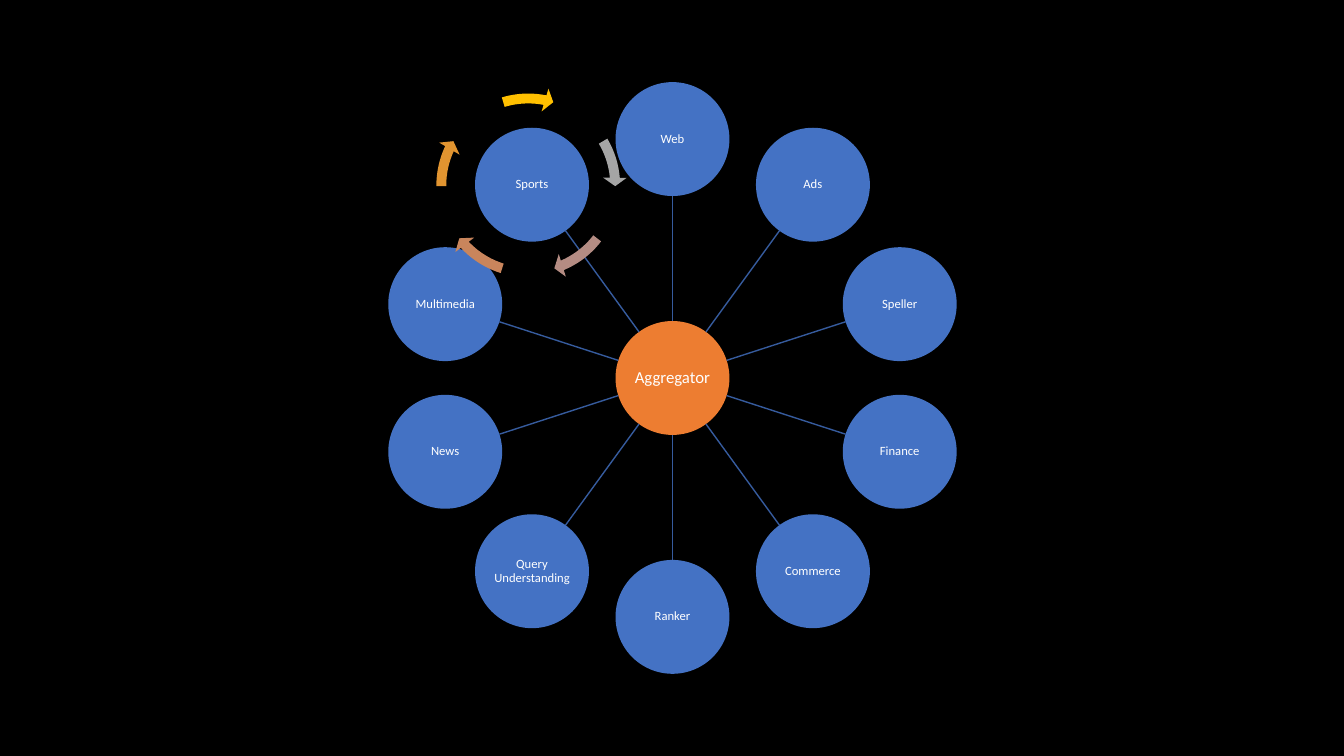
from dataclasses import dataclass
from math import cos, radians, sin

from lxml.etree import SubElement
from pptx import Presentation
from pptx.dml.color import RGBColor
from pptx.enum.shapes import MSO_CONNECTOR as Link, MSO_SHAPE as Shape
from pptx.enum.text import MSO_ANCHOR as Anchor, PP_ALIGN as Align
from pptx.oxml.ns import qn
from pptx.shapes.autoshape import Shape as Auto
from pptx.slide import Slide
from pptx.util import Inches, Pt

HUES = {
    "back": "000000", "hub": "ED7D31", "node": "4472C4", "spoke": "365B9D",
    "text": "FFFFFF", "gray": "A5A5A5", "mauve": "B48C83", "clay": "C9855C",
    "amber": "E19430", "gold": "FFC000",
}
MID_X, MID_Y = 6.67, 3.75
ORBIT = 2.37
DISC = 1.13
RING = 1.96
RING_X, RING_Y = 5.24, 1.84


@dataclass
class Node:
    label: str
    x: float
    y: float
    hue: str = "node"
    size: int = 9


@dataclass
class Arrow:
    hue: str
    end: float
    start: float


NAMES = ["Web", "Ads", "Speller", "Finance", "Commerce", "Ranker",
         "Query Understanding", "News", "Multimedia", "Sports"]
ARROWS = [
    Arrow("gray", 212.95, 197.65),
    Arrow("mauve", 40.16, 22.52),
    Arrow("clay", 82.13, 64.48),
    Arrow("amber", 123, 107.7),
    Arrow("gold", 168.67, 151.97),
]


def color(name: str) -> RGBColor:
    """Return the named colour."""
    return RGBColor.from_string(HUES[name])


def polar(turn: float, dist: float) -> tuple[float, float]:
    """Return the point at an angle and distance from the hub."""
    return MID_X + dist * cos(turn), MID_Y + dist * sin(turn)


def add_round(slide: Slide, kind: Shape, x: float, y: float,
              size: float, hue: str) -> Auto:
    """Add a flat shape in a square centred on a point."""
    shape = slide.shapes.add_shape(
        kind, Inches(x - size / 2), Inches(y - size / 2), Inches(size), Inches(size))
    shape.shadow.inherit = False
    shape.fill.solid()
    shape.fill.fore_color.rgb = color(hue)
    shape.line.fill.background()
    return shape


def draw_node(slide: Slide, node: Node) -> None:
    """Draw a labelled disc."""
    disc = add_round(slide, Shape.OVAL, node.x, node.y, DISC, node.hue)
    frame = disc.text_frame
    frame.word_wrap = True
    frame.vertical_anchor = Anchor.MIDDLE
    frame.margin_left = frame.margin_right = Inches(0.01)
    frame.margin_top = frame.margin_bottom = Inches(0.01)
    para = frame.paragraphs[0]
    para.text = node.label
    para.alignment = Align.CENTER
    para.line_spacing = 0.9
    para.font.name = "Calibri"
    para.font.size = Pt(node.size)
    para.font.color.rgb = color("text")


def draw_spoke(slide: Slide, turn: float) -> None:
    """Draw the line from the hub's edge to a node's edge."""
    x1, y1 = polar(turn, DISC / 2)
    x2, y2 = polar(turn, ORBIT - DISC / 2)
    spoke = slide.shapes.add_connector(
        Link.STRAIGHT, Inches(x1), Inches(y1), Inches(x2), Inches(y2))
    spoke.line.color.rgb = color("spoke")
    spoke.line.width = Pt(1)
    SubElement(spoke.element.spPr, qn("a:effectLst"))


def draw_arrow(slide: Slide, arrow: Arrow) -> None:
    """Draw one curved arrow of the ring around Sports."""
    shape = add_round(slide, Shape.CIRCULAR_ARROW, RING_X, RING_Y, RING, arrow.hue)
    for i, value in enumerate((0.05, 3.36, arrow.end, arrow.start, 0.06)):
        shape.adjustments[i] = value


def main() -> None:
    """Build the slide and save it."""
    deck = Presentation()
    deck.slide_width, deck.slide_height = Inches(13.33), Inches(7.5)
    slide = deck.slides.add_slide(deck.slide_layouts[6])
    slide.background.fill.solid()
    slide.background.fill.fore_color.rgb = color("back")
    draw_node(slide, Node("Aggregator", MID_X, MID_Y, "hub", 12))
    for i, name in enumerate(NAMES):
        turn = radians(360 / len(NAMES) * i - 90)
        draw_spoke(slide, turn)
        draw_node(slide, Node(name, *polar(turn, ORBIT)))
    for arrow in ARROWS:
        draw_arrow(slide, arrow)
    deck.save("out.pptx")


if __name__ == "__main__":
    main()
